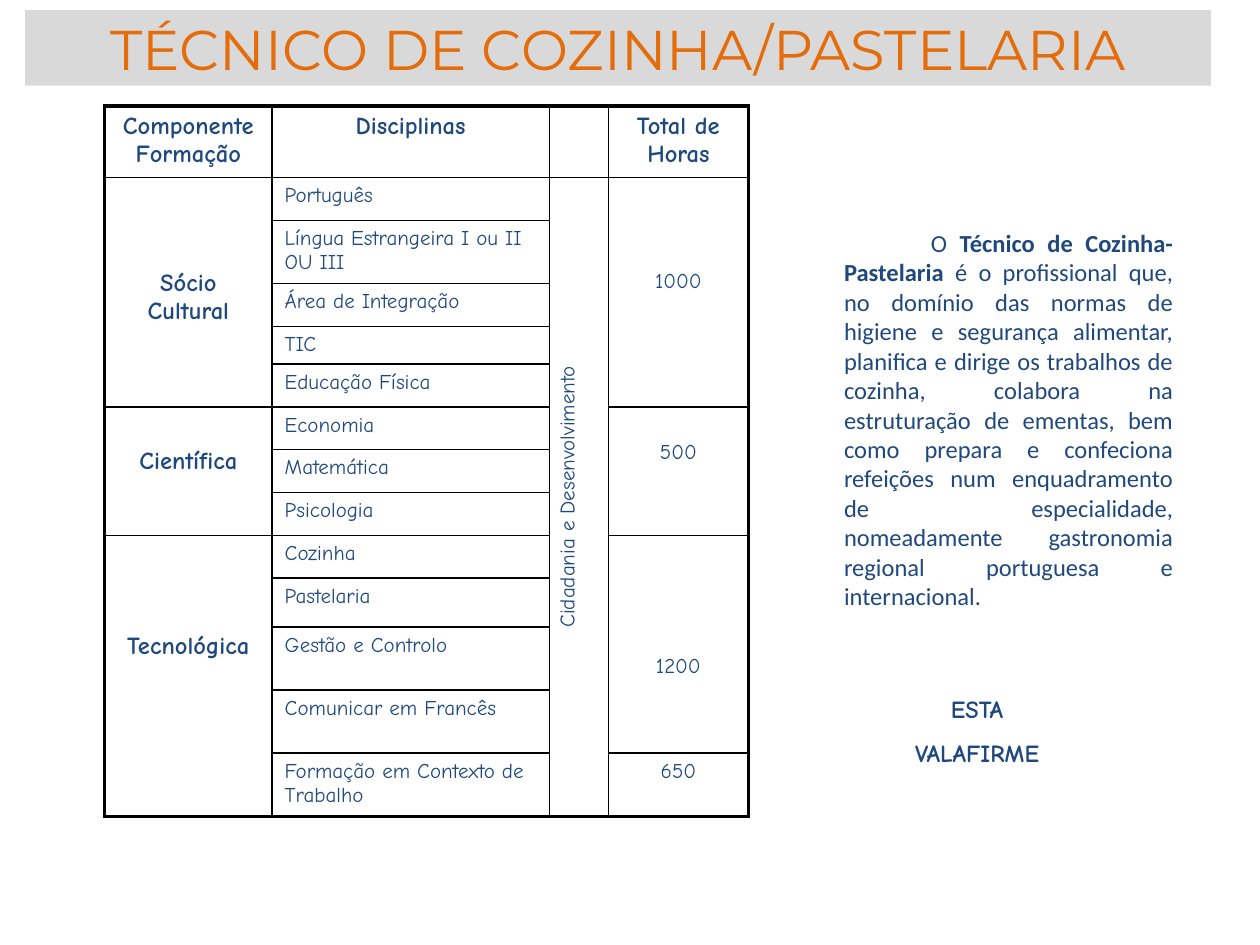
from lxml import etree
from pptx import Presentation
from pptx.dml.color import RGBColor
from pptx.enum.shapes import MSO_SHAPE
from pptx.enum.text import MSO_ANCHOR, PP_ALIGN
from pptx.oxml.ns import qn
from pptx.util import Inches, Pt

RECT = MSO_SHAPE.RECTANGLE
MIDDLE = MSO_ANCHOR.MIDDLE
LEFT, CENTER, JUSTIFY = PP_ALIGN.LEFT, PP_ALIGN.CENTER, PP_ALIGN.JUSTIFY

COLORS = {"banner": "D9D9D9", "title": "E46C0A", "text": "1F497D", "line": "000000"}
HAND, BODY, TITLE = "Comic Neue", "Calibri", "Montserrat"
THIN, THICK = 1, 2.25

COL_WIDTHS = [1.33, 2.2, 0.47, 1.11]
ROW_HEIGHTS = [0.57, 0.34, 0.5, 0.34, 0.3] + [0.34] * 5 + [0.39] + [0.5] * 3
HEADERS = ["Componente Formação", "Disciplinas", "", "Total de Horas"]
SUBJECTS = [
    "Português", "Língua Estrangeira I ou II OU III", "Área de Integração", "TIC",
    "Educação Física", "Economia", "Matemática", "Psicologia", "Cozinha", "Pastelaria",
    "Gestão e Controlo", "Comunicar em Francês", "Formação em Contexto de Trabalho",
]
# Text, first row, number of rows, space above the text
COMPONENTS = [("Sócio Cultural", 1, 5, 0.73), ("Científica", 6, 3, 0.32),
              ("Tecnológica", 9, 5, 0.77)]
HOURS = [("1000", 1, 5, 0.73), ("500", 6, 3, 0.27), ("1200", 9, 4, 0.95),
         ("650", 13, 1, 0.05)]
CROSS_SUBJECT = "Cidadania e Desenvolvimento"
PROFILE = [
    ("O ", False),
    ("Técnico de Cozinha-Pastelaria ", True),
    ("é o profissional que, no domínio das normas de higiene e segurança alimentar, "
     "planifica e dirige os trabalhos de cozinha, colabora na estruturação de ementas, "
     "bem como prepara e confeciona refeições num enquadramento de especialidade, "
     "nomeadamente gastronomia regional portuguesa e internacional.", False),
]
SCHOOL = ["ESTA", "VALAFIRME"]


def format_run(r, size, font=HAND, color="text", bold=False):
    r.font.size = Pt(size)
    r.font.name = font
    r.font.bold = bold
    r.font.color.rgb = RGBColor.from_string(COLORS[color])


def set_borders(cell, widths):
    """Draw the left, right, top and bottom edges; a width of 0 hides an edge."""
    tc_pr = cell._tc.get_or_add_tcPr()
    for side, width in zip("LRTB", widths):
        ln = etree.SubElement(tc_pr, qn(f"a:ln{side}"), w=str(int(Pt(width))))
        if width:
            fill = etree.SubElement(ln, qn("a:solidFill"))
            etree.SubElement(fill, qn("a:srgbClr"), val=COLORS["line"])
        else:
            etree.SubElement(ln, qn("a:noFill"))


def fill_cell(cell, text, size=12, bold=False, align=CENTER, top=0.05):
    cell.margin_top = Inches(top)
    cell.text_frame.text = text
    p = cell.text_frame.paragraphs[0]
    p.alignment = align
    for r in p.runs:
        format_run(r, size, bold=bold)


def add_banner(slide, box):
    sp = slide.shapes.add_shape(RECT, *box)
    sp.shadow.inherit = False
    sp.fill.solid()
    sp.fill.fore_color.rgb = RGBColor.from_string(COLORS["banner"])
    sp.line.fill.background()
    tf = sp.text_frame
    tf.word_wrap = False
    tf.vertical_anchor = MIDDLE
    tf.text = "TÉCNICO DE COZINHA/PASTELARIA"
    p = tf.paragraphs[0]
    p.alignment = CENTER
    format_run(p.runs[0], 32, TITLE, "title")


def add_curriculum(slide, box):
    n_rows, n_cols = len(ROW_HEIGHTS), len(COL_WIDTHS)
    table = slide.shapes.add_table(n_rows, n_cols, *box).table
    table.first_row = table.horz_banding = False
    for col, width in zip(table.columns, COL_WIDTHS):
        col.width = int(box[2] * width / sum(COL_WIDTHS))
    for row, height in zip(table.rows, ROW_HEIGHTS):
        row.height = int(box[3] * height / sum(ROW_HEIGHTS))

    for c, header in enumerate(HEADERS):
        fill_cell(table.cell(0, c), header, 14, True)
    for r, subject in enumerate(SUBJECTS, 1):
        fill_cell(table.cell(r, 1), subject, align=LEFT)

    spans = {(r, c): (r, 1) for r in range(n_rows) for c in range(n_cols)}
    groups = [(0, 14, True, g) for g in COMPONENTS] + [(3, 12, False, g) for g in HOURS]
    groups.append((2, 12, False, (CROSS_SUBJECT, 1, n_rows - 1, 0.05)))
    for c, size, bold, (text, first, count, top) in groups:
        cell = table.cell(first, c)
        if count > 1:
            cell.merge(table.cell(first + count - 1, c))
        fill_cell(cell, text, size, bold, top=top)
        for r in range(first, first + count):
            spans[r, c] = (first, count)

    for (r, c), (first, count) in spans.items():
        cell, last = table.cell(r, c), first + count - 1
        top = (THIN if first else THICK) if r == first else 0
        bottom = (THICK if last == n_rows - 1 else THIN) if r in (first, last) else 0
        set_borders(cell, [THIN if c else THICK,
                           THICK if c == n_cols - 1 else THIN, top, bottom])
        cell.fill.background()
    table.cell(1, 2)._tc.get_or_add_tcPr().set("vert", "vert270")


def add_profile(slide, box):
    tf = slide.shapes.add_textbox(*box).text_frame
    tf.word_wrap = True
    tf.margin_top = Inches(0.35)
    p = tf.paragraphs[0]
    p.alignment = JUSTIFY
    p_pr = p._p.get_or_add_pPr()
    p_pr.set("marL", str(Inches(0.5)))
    p_pr.set("indent", str(Inches(0.69)))
    for text, bold in PROFILE:
        r = p.add_run()
        r.text = text
        format_run(r, 14, BODY, bold=bold)
    for line, gap in zip(SCHOOL, (48, 8)):
        p = tf.add_paragraph()
        p.text = line
        p.alignment = CENTER
        p.space_before = Pt(gap)
        format_run(p.runs[0], 14, bold=True)


def main():
    prs = Presentation()
    prs.slide_width, prs.slide_height = Inches(10), Inches(7.5)
    slide = prs.slides.add_slide(prs.slide_layouts[6])
    regions = [
        (add_banner, (0.2, 0.08, 9.41, 0.6)),
        (add_curriculum, (0.83, 0.84, 5.11, 5.64)),
        (add_profile, (6.1, 1.46, 3.31, 5.12)),
    ]
    for add_region, box in regions:
        add_region(slide, [Inches(v) for v in box])
    prs.save("out.pptx")


if __name__ == "__main__":
    main()
